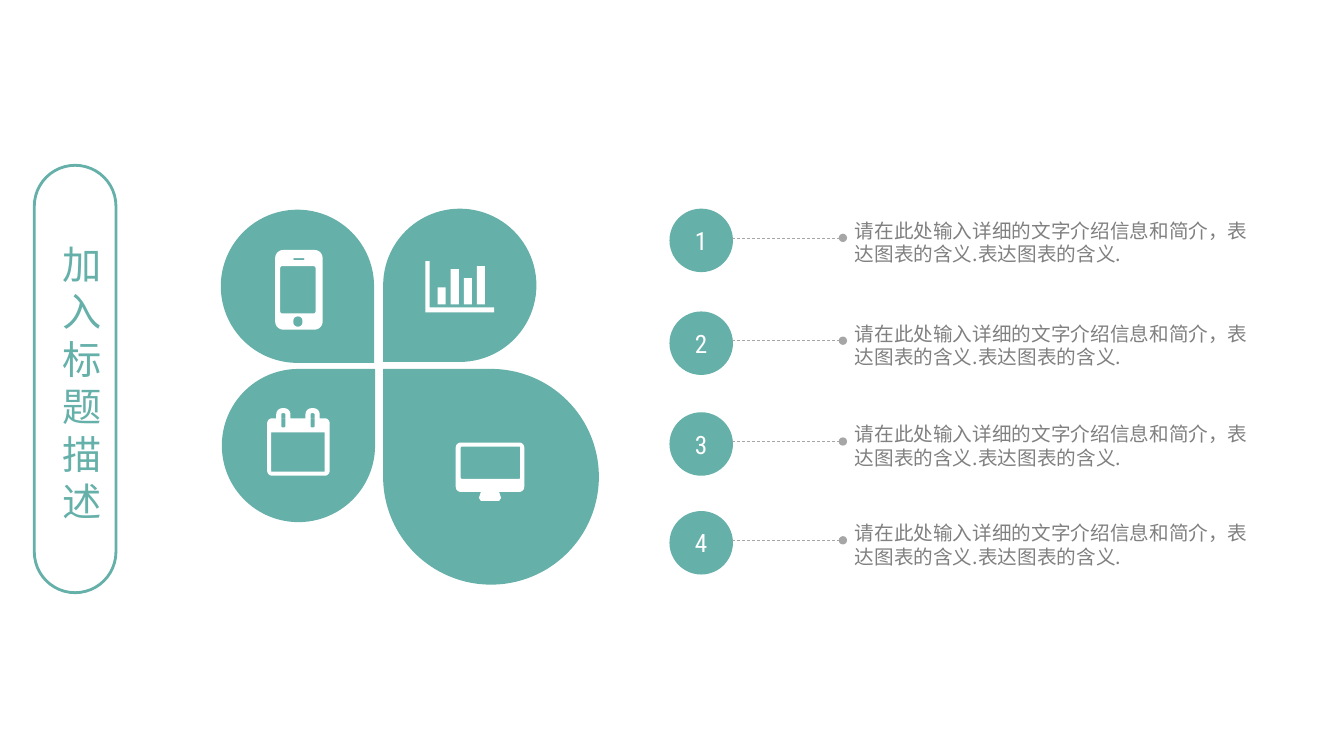
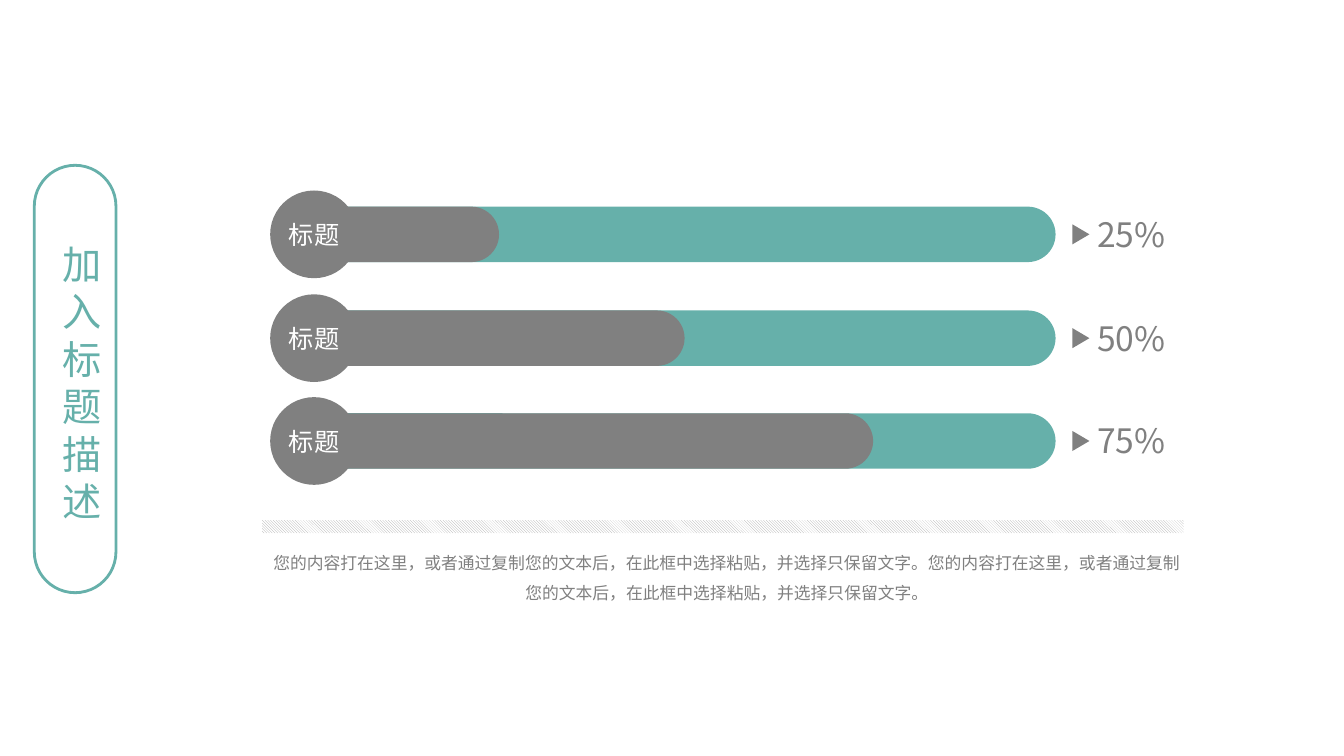
from dataclasses import dataclass
from math import cos, pi, sin

from lxml import etree
from pptx import Presentation
from pptx import util as u
from pptx.dml.color import RGBColor
from pptx.enum import dml, shapes, text
from pptx.oxml.ns import qn

PX = 9144
KIND = shapes.MSO_SHAPE
ALIGN = text.PP_ALIGN


@dataclass(frozen=True)
class Theme:
    teal: RGBColor = RGBColor(0x66, 0xB0, 0xAA)
    gray: RGBColor = RGBColor(0x80, 0x80, 0x80)
    pale: RGBColor = RGBColor(0xA6, 0xA6, 0xA6)
    white: RGBColor = RGBColor(0xFF, 0xFF, 0xFF)
    font: str = "Noto Sans CJK SC"
    digit: str = "Roboto Condensed"
    title: int = 28
    value: int = 24
    label: int = 18
    body: int = 14
    note: int = 12


T = Theme()


def px(*sizes):
    return [u.Emu(round(size * PX)) for size in sizes]


def write(shape, words, size, color, align=ALIGN.CENTER, face=T.font, space=None):
    para = shape.text_frame.paragraphs[0]
    para.text = words
    para.alignment = align
    font = para.font
    font.size = u.Pt(size)
    font.name = face
    font.color.rgb = color
    props = para._p.get_or_add_pPr().get_or_add_defRPr()
    etree.SubElement(props, qn("a:ea")).set("typeface", face)
    if space:
        props.set("spc", str(space * 100))
    return para


def add_text(parts, area, words, size, color, wrap=True, fit=True, **style):
    box = parts.add_textbox(*px(*area))
    para = write(box, words, size, color, **style)
    frame = box.text_frame
    frame.word_wrap = wrap
    if fit:
        frame.auto_size = text.MSO_AUTO_SIZE.SHAPE_TO_FIT_TEXT
    return box, para


def add_form(parts, kind, area, color=None, turn=0):
    form = parts.add_shape(kind, *px(*area))
    form.shadow.inherit = False
    form.rotation = turn
    form.line.fill.background()
    if color is None:
        form.fill.background()
    else:
        form.fill.solid()
        form.fill.fore_color.rgb = color
    return form


def add_pill(parts, area, color=None):
    pill = add_form(parts, KIND.ROUNDED_RECTANGLE, area, color)
    pill.adjustments[0] = 0.5
    return pill


def add_disc(parts, area, color, words, face=T.font):
    disc = add_form(parts, KIND.OVAL, area, color)
    frame = disc.text_frame
    frame.vertical_anchor = text.MSO_ANCHOR.MIDDLE
    frame.margin_left = frame.margin_right = px(5)[0]
    frame.margin_top = frame.margin_bottom = px(5)[0]
    write(disc, words, T.label, T.white, face=face)


def add_lead(parts, left, right, y):
    lead = parts.add_connector(shapes.MSO_CONNECTOR.STRAIGHT, *px(left, y, right, y))
    lead.line.color.rgb = T.pale
    lead.line.width = u.Pt(0.5)
    lead.line.dash_style = dml.MSO_LINE.DASH
    etree.SubElement(lead.line._get_or_add_ln(), qn("a:tailEnd")).set("type", "oval")
    etree.SubElement(lead._element.spPr, qn("a:effectLst"))


def add_title(slide):
    group = slide.shapes.add_group_shape().shapes
    pill = add_pill(group, (34, 164, 81, 424))
    pill.line.color.rgb = T.teal
    pill.line.width = u.Pt(2)
    box, _ = add_text(group, (41, 233, 67, 296), "加入标题描述", T.title, T.teal, space=6)
    box.text_frame._txBody.bodyPr.set("vert", "eaVert")


def block(x, y, w, h, top=0, base=None):
    base = top if base is None else base
    spots = [
        (x + w - top, y + top, top, 3),
        (x + w - base, y + h - base, base, 0),
        (x + base, y + h - base, base, 1),
        (x + top, y + top, top, 2),
    ]
    points = []
    for across, down, r, turn in spots:
        steps = 8 if r else 0
        for step in range(steps + 1):
            angle = (turn + step / max(steps, 1)) * pi / 2
            points.append((across + r * cos(angle), down + r * sin(angle)))
    return points


def add_icon(parts, loops):
    first, *others = [[px(*point) for point in loop] for loop in loops]
    pen = parts.build_freeform(*first[0], scale=1.0)
    pen.add_line_segments(first[1:], close=True)
    for loop in others:
        pen.move_to(*loop[0])
        pen.add_line_segments(loop[1:], close=True)
    icon = pen.convert_to_shape()
    icon.shadow.inherit = False
    icon.fill.solid()
    icon.fill.fore_color.rgb = T.white
    icon.line.fill.background()


def phone():
    return [
        block(273, 248, 47, 79, 8),
        block(278, 264, 35, 47, 2),
        block(291, 256, 11, 2, 1),
        block(291, 314, 9, 10, 4),
    ]


def graph():
    axes = [(422, 259), (426, 259), (426, 305), (490, 305), (490, 310), (422, 310)]
    bars = zip((434, 447, 460, 473), (285, 267, 276, 264))
    return [axes] + [block(x, y, 8, 302 - y) for x, y in bars]


def diary():
    loops = [block(265, 415, 62, 57, 5), block(269, 429, 53, 39)]
    for x in (274, 303):
        loops += [block(x, 405, 14, 10, 6, 0), block(x + 5, 410, 4, 14, 1)]
    return loops


def screen():
    stand = [(477, 488), (495, 488), (497, 494), (495, 497), (477, 497), (475, 494)]
    return [block(452, 439, 68, 49, 5), block(457, 443, 59, 32, 1), stand]


def add_petals(slide):
    group = slide.shapes.add_group_shape().shapes
    petals = [
        (220, 366, 152, 0, diary()),
        (380, 366, 214, 270, screen()),
        (380, 207, 152, 180, graph()),
        (219, 208, 152, 90, phone()),
    ]
    for x, y, size, turn, loops in petals:
        add_form(group, KIND.TEAR, (x, y, size, size), T.teal, turn)
        add_icon(group, loops)


def add_item(slide, top, mark):
    parts = slide.shapes
    add_disc(parts, (664, top, 63, 63), T.teal, mark, T.digit)
    add_lead(parts, 726, 836, top + 29)
    words = "请在此处输入详细的文字介绍信息和简介，表达图表的含义.表达图表的含义."
    add_text(parts, (838, top + 5, 423, 87), words, T.body, T.gray, fit=False, align=ALIGN.LEFT)


def add_bar(slide, top, width, value):
    parts = slide.shapes
    add_pill(parts, (311, top, 736, 55), T.teal)
    add_form(parts, KIND.ISOSCELES_TRIANGLE, (1062, top + 19, 20, 17), T.gray, 90)
    add_pill(parts, (311, top, width, 55), T.gray)
    add_text(parts, (1077, top + 2, 90, 50), value, T.value, T.gray, wrap=False)
    add_disc(parts, (268, top - 16, 87, 87), T.gray, "标题")


def add_note(slide):
    words = "您的内容打在这里，或者通过复制您的文本后，在此框中选择粘贴，并选择只保留文字。" * 2
    _, para = add_text(slide.shapes, (257, 533, 928, 67), words, T.note, T.gray)
    para.line_spacing = 1.5
    band = add_form(slide.shapes, KIND.RECTANGLE, (260, 516, 914, 13))
    band.fill.patterned()
    band.fill.pattern = dml.MSO_PATTERN.DARK_DOWNWARD_DIAGONAL
    band.fill.fore_color.rgb = T.pale
    band.fill.back_color.rgb = T.white


def add_slide(deck):
    slide = deck.slides.add_slide(deck.slide_layouts[6])
    add_title(slide)
    return slide


def main():
    deck = Presentation()
    deck.slide_width, deck.slide_height = px(1333, 750)

    slide = add_slide(deck)
    for mark, top in enumerate((207, 309, 409, 507), 1):
        add_item(slide, top, str(mark))
    add_petals(slide)

    slide = add_slide(deck)
    for top, width, value in ((205, 184, "25%"), (308, 368, "50%"), (410, 555, "75%")):
        add_bar(slide, top, width, value)
    add_note(slide)

    deck.save("out.pptx")


if __name__ == "__main__":
    main()
